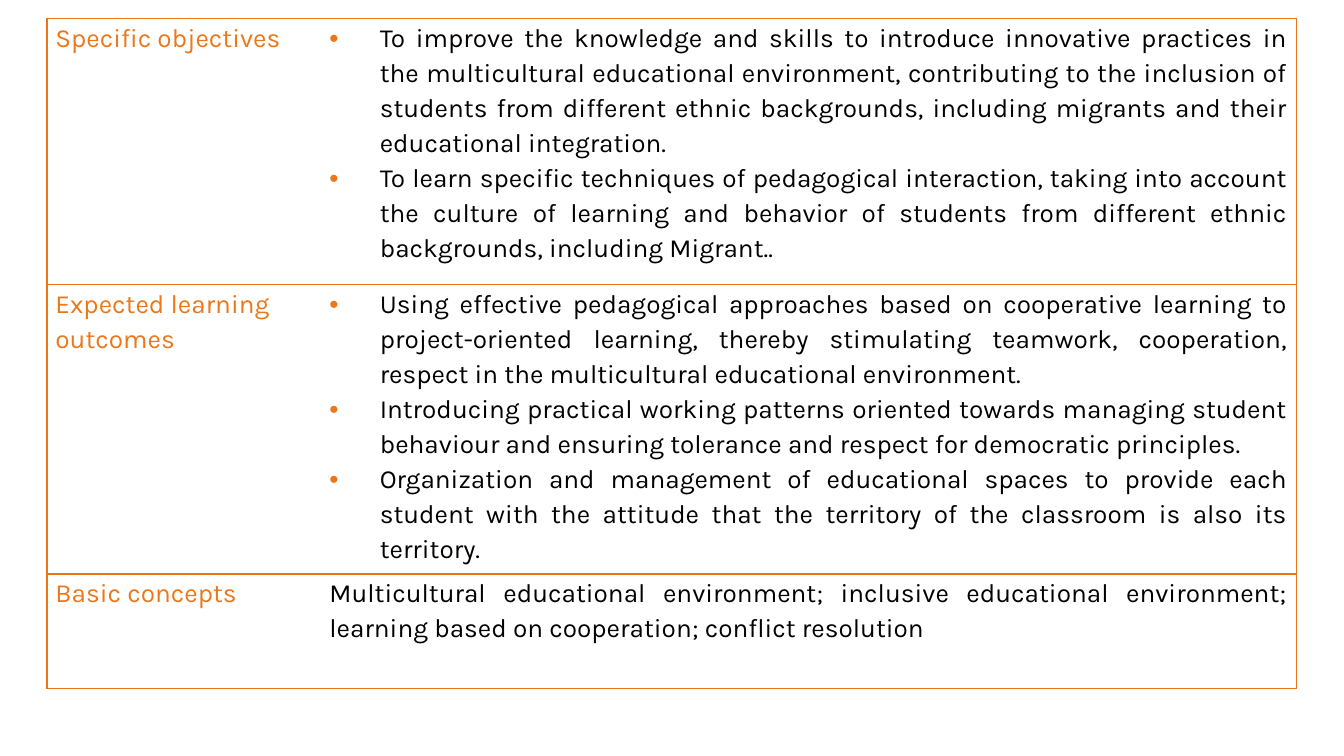
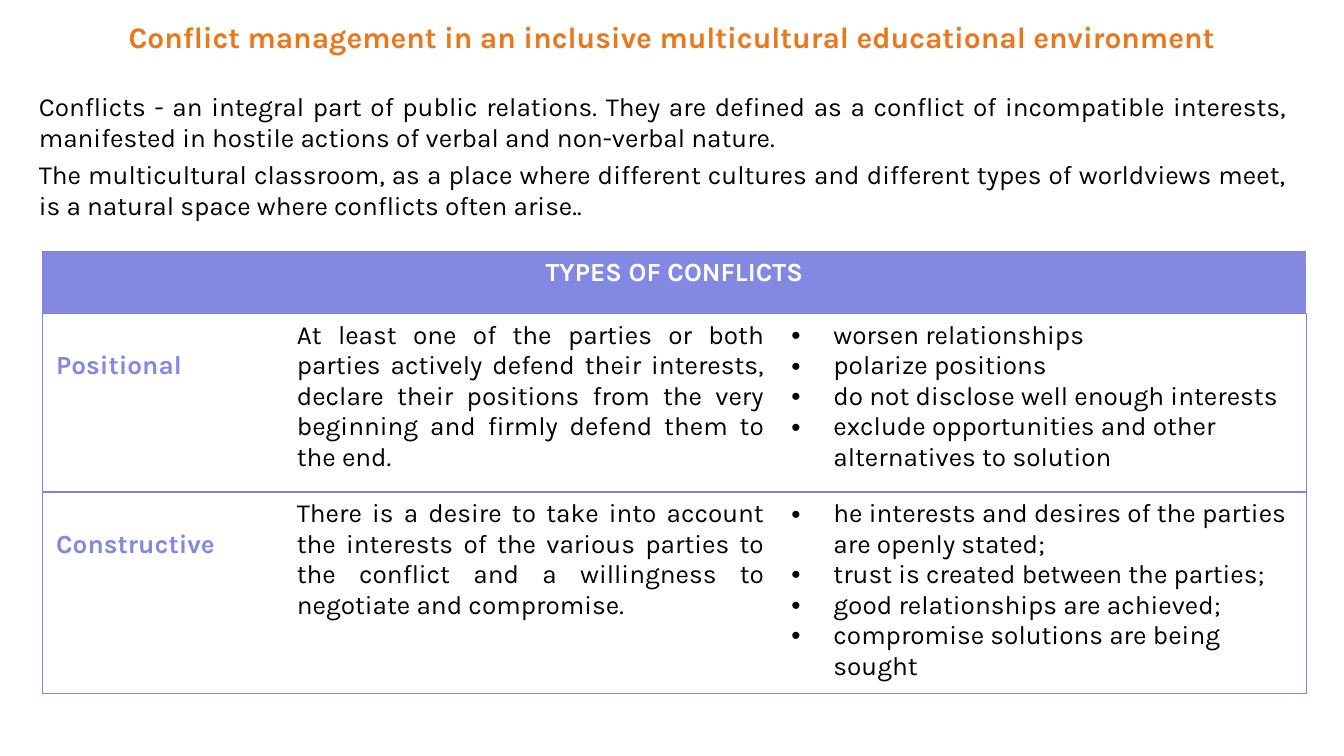
import pptx
import pptx.dml.color
import pptx.enum.text
import pptx.oxml.ns
import pptx.util
from lxml import etree

Pt = pptx.util.Pt
ALIGN = pptx.enum.text.PP_ALIGN
qn = pptx.oxml.ns.qn

FONT = "Karla"
COLORS = {
    "orange": "EC771B",
    "orange_line": "EC7415",
    "violet": "8388E3",
    "violet_line": "7E83E0",
    "black": "000000",
    "white": "FFFFFF",
}


def add_grid(page, left, top, widths, heights, line_color):
    """Add a table ruled between rows and around the outside, with no inner verticals."""
    table = page.shapes.add_table(len(heights), len(widths), Pt(left), Pt(top),
                                  Pt(sum(widths)), Pt(sum(heights))).table
    table.first_row = table.horz_banding = False
    for column, width in zip(table.columns, widths):
        column.width = Pt(width)
    for row, height in zip(table.rows, heights):
        row.height = Pt(height)
        for index, cell in enumerate(row.cells):
            ruled = {"lnL": index == 0, "lnR": index == len(widths) - 1,
                     "lnT": True, "lnB": True}
            props = cell._tc.get_or_add_tcPr()
            for side, visible in ruled.items():
                line = etree.SubElement(props, qn("a:" + side), w=str(Pt(0.75)))
                if visible:
                    fill = etree.SubElement(line, qn("a:solidFill"))
                    etree.SubElement(fill, qn("a:srgbClr"), val=COLORS[line_color])
                else:
                    etree.SubElement(line, qn("a:noFill"))
            cell.fill.background()
    return table


def write(frame, lines, color="black", size=14, bold=False, align=ALIGN.LEFT,
          spacing=None, gap=None, bullet=None, indent=0):
    """Fill a text frame, one paragraph a line; bullet names the bullet colour."""
    frame.text = "\n".join(lines)
    for number, para in enumerate(frame.paragraphs):
        para.alignment = align
        if spacing:
            para.line_spacing = spacing
        if gap and number:
            para.space_before = Pt(gap)
        if bullet:
            props = para._p.get_or_add_pPr()
            props.set("marL", str(Pt(indent)))
            props.set("indent", str(-Pt(indent)))
            tint = etree.SubElement(props, qn("a:buClr"))
            etree.SubElement(tint, qn("a:srgbClr"), val=COLORS[bullet])
            etree.SubElement(props, qn("a:buFont"), typeface="Arial")
            etree.SubElement(props, qn("a:buChar"), char="•")
        for span in para.runs:
            span.font.name = FONT
            span.font.size = Pt(size)
            span.font.bold = bold
            span.font.color.rgb = pptx.dml.color.RGBColor.from_string(COLORS[color])


deck = pptx.Presentation()
deck.slide_width, deck.slide_height = Pt(720), Pt(405)
blank = deck.slide_layouts[6]

# Slide 1: objectives, outcomes and concepts
page = deck.slides.add_slide(blank)
overview = [
    ("Specific objectives", "orange", [
        "To improve the knowledge and skills to introduce innovative practices in the "
        "multicultural educational environment, contributing to the inclusion of students "
        "from different ethnic backgrounds, including migrants and their educational "
        "integration.",
        "To learn specific techniques of pedagogical interaction, taking into account the "
        "culture of learning and behavior of students from different ethnic backgrounds, "
        "including Migrant..",
    ]),
    ("Expected learning outcomes", "orange", [
        "Using effective pedagogical approaches based on cooperative learning to "
        "project-oriented learning, thereby stimulating teamwork, cooperation, respect in "
        "the multicultural educational environment.",
        "Introducing practical working patterns oriented towards managing student behaviour "
        "and ensuring tolerance and respect for democratic principles.",
        "Organization and management of educational spaces to provide each student with the "
        "attitude that the territory of the classroom is also its territory.",
    ]),
    ("Basic concepts", None, [
        "Multicultural educational environment; inclusive educational environment; "
        "learning based on cooperation; conflict resolution",
    ]),
]
table = add_grid(page, 25.2, 10, [146.8, 522.5], [142.5, 155, 61.5], "orange_line")
for row, (label, bullet, lines) in zip(table.rows, overview):
    for cell in row.cells:
        cell.margin_left = cell.margin_right = Pt(4.5)
        cell.margin_top = cell.margin_bottom = 0
    label_cell, text_cell = row.cells
    write(label_cell.text_frame, [label], color="orange", spacing=1.15)
    write(text_cell.text_frame, lines, align=ALIGN.JUSTIFY, spacing=1.15,
          bullet=bullet, indent=27)

# Slide 2: types of conflicts
page = deck.slides.add_slide(blank)
title = page.shapes.add_textbox(0, Pt(4.5), Pt(720), Pt(30))
intro = page.shapes.add_textbox(Pt(13.7), Pt(44.6), Pt(683.3), Pt(77.8))
for box in (title, intro):
    box.text_frame.word_wrap = True
    box.text_frame.vertical_anchor = pptx.enum.text.MSO_ANCHOR.MIDDLE
write(title.text_frame,
      ["Conflict management in an inclusive multicultural educational environment"],
      color="orange", size=16, bold=True, align=ALIGN.CENTER)
write(intro.text_frame, [
    "Conflicts - an integral part of public relations. They are defined as a conflict of "
    "incompatible interests, manifested in hostile actions of verbal and non-verbal nature.",
    "The multicultural classroom, as a place where different cultures and different types "
    "of worldviews meet, is a natural space where conflicts often arise..",
], align=ALIGN.JUSTIFY, gap=2.8)

conflicts = [
    ("Positional",
     "At least one of the parties or both parties actively defend their interests, declare "
     "their positions from the very beginning and firmly defend them to the end.",
     ["worsen relationships", "polarize positions", "do not disclose well enough interests",
      "exclude opportunities and other alternatives to solution"]),
    ("Constructive",
     "There is a desire to take into account the interests of the various parties to the "
     "conflict and a willingness to negotiate and compromise.",
     ["he interests and desires of the parties are openly stated;",
      "trust is created between the parties;", "good relationships are achieved;",
      "compromise solutions are being sought"]),
]
table = add_grid(page, 22.9, 134.6, [128.9, 265, 283], [33.5, 95.5, 95.5], "violet_line")
for cell in table.rows[0].cells:
    cell.fill.solid()
    cell.fill.fore_color.rgb = pptx.dml.color.RGBColor.from_string(COLORS["violet"])
header = table.cell(0, 0)
header.merge(table.cell(0, 2))
write(header.text_frame, ["TYPES OF CONFLICTS"], color="white", bold=True, align=ALIGN.CENTER)
for number, (kind, meaning, effects) in enumerate(conflicts, start=1):
    kind_cell, meaning_cell, effects_cell = table.rows[number].cells
    kind_cell.margin_top = Pt(20)
    write(kind_cell.text_frame, [kind], color="violet", bold=True)
    write(meaning_cell.text_frame, [meaning], align=ALIGN.JUSTIFY)
    write(effects_cell.text_frame, effects, bullet="black", indent=22.5)

deck.save("out.pptx")
